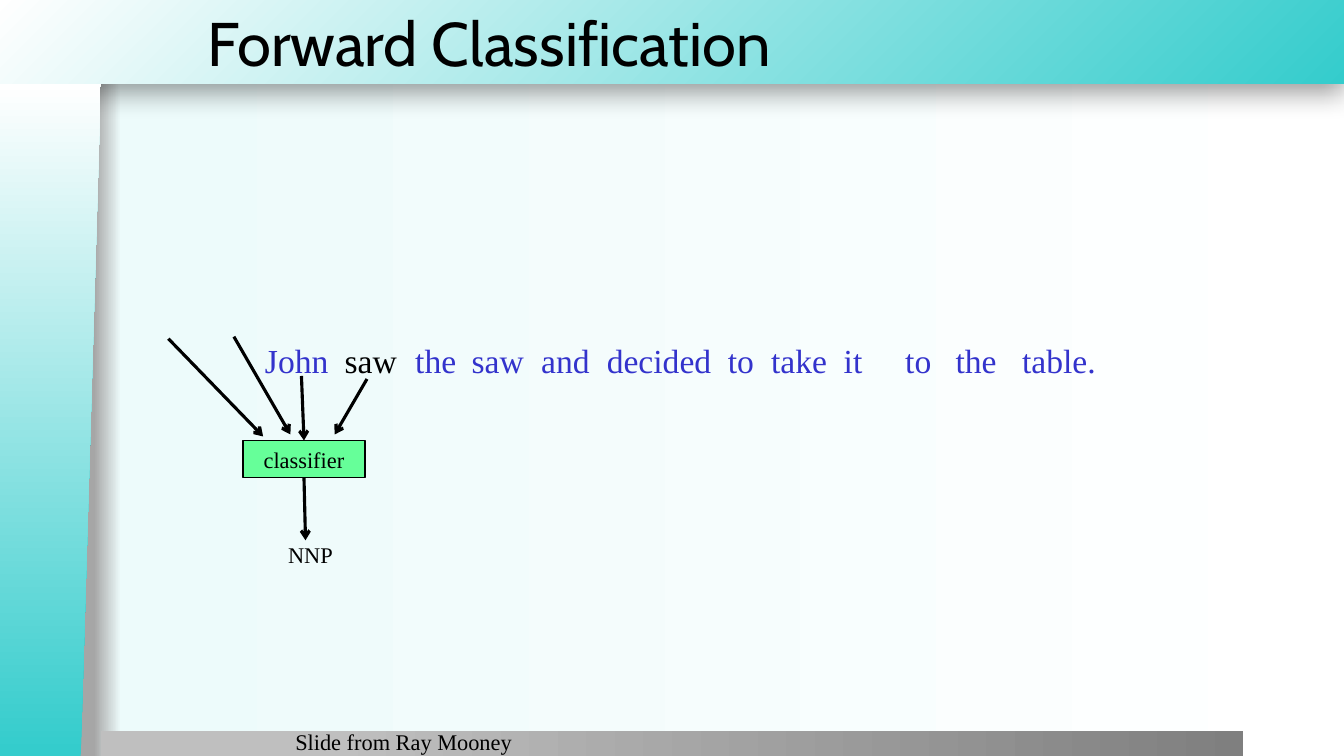
import pptx
import pptx.dml.color
import pptx.enum.shapes
import pptx.enum.text
import pptx.oxml
import pptx.oxml.ns
import pptx.util
from pptx.util import Inches

COLOURS = {
    "black": "000000", "white": "FFFFFF", "teal": "34CCCC", "mist": "EDFBFB",
    "edge": "A6A6A6", "silver": "BFBFBF", "grey": "7F7F7F",
    "blue": "3333CC", "green": "66FF99",
}
SHAPES = pptx.enum.shapes.MSO_SHAPE
ALIGN = pptx.enum.text.PP_ALIGN
ANCHOR = pptx.enum.text.MSO_ANCHOR
TOP, BOTTOM = 0, 2


def rgb(name):
    return pptx.dml.color.RGBColor.from_string(COLOURS[name])


def xml(markup):
    head, rest = markup.split(">", 1)
    closing = "/" if head.endswith("/") else ""
    head = head.rstrip("/") + " " + pptx.oxml.ns.nsdecls("a")
    return pptx.oxml.parse_xml(head + closing + ">" + rest)


def write(para, text, font="Times New Roman", size=16, colour="black", align=ALIGN.LEFT):
    para.alignment = align
    span = para.add_run()
    span.text = text
    span.font.name = font
    span.font.size = pptx.util.Pt(size)
    span.font.color.rgb = rgb(colour)


class SlideBuilder:
    """Draws styled elements on the current slide."""

    def __init__(self, page):
        self.page = page

    def gradient(self, owner, fill, stops, toward_corner=False):
        fill.gradient()
        old = owner.element.find(".//" + pptx.oxml.ns.qn("a:gradFill"))
        marks = "".join(
            f'<a:gs pos="{place * 1000}"><a:srgbClr val="{COLOURS[name]}"/></a:gs>'
            for place, name in stops)
        course = '<a:lin ang="0" scaled="0"/>'
        if toward_corner:
            course = '<a:path path="circle"><a:fillToRect l="100000" t="100000"/></a:path>'
        old.getparent().replace(old, xml(
            f'<a:gradFill rotWithShape="1"><a:gsLst>{marks}</a:gsLst>{course}</a:gradFill>'))

    def background(self, stops):
        self.gradient(self.page, self.page.background.fill, stops)

    def shape(self, kind, left, top, width, height):
        shape = self.page.shapes.add_shape(
            kind, Inches(left), Inches(top), Inches(width), Inches(height))
        shape.shadow.inherit = False
        return shape

    def band(self, kind, place, stops, toward_corner=False):
        band = self.shape(kind, *place)
        self.gradient(band, band.fill, stops, toward_corner)
        band.line.fill.background()
        return band

    def drop_shadow(self, shape):
        effects = shape.element.spPr.find(pptx.oxml.ns.qn("a:effectLst"))
        blur, distance = pptx.util.Pt(20), pptx.util.Pt(6)
        effects.append(xml(
            f'<a:outerShdw blurRad="{blur}" dist="{distance}" dir="5400000" rotWithShape="0">'
            f'<a:srgbClr val="{COLOURS["black"]}"><a:alpha val="40000"/></a:srgbClr>'
            '</a:outerShdw>'))

    def title(self, text, left, top, width, height):
        title = self.page.shapes.title
        title.left, title.top = Inches(left), Inches(top)
        title.width, title.height = Inches(width), Inches(height)
        title.text_frame.vertical_anchor = ANCHOR.MIDDLE
        title.text_frame.auto_size = pptx.enum.text.MSO_AUTO_SIZE.NONE
        write(title.text_frame.paragraphs[0], text, font="Cabin", size=44)
        title.element.getparent().append(title.element)

    def text(self, text, left, top, width, height, **style):
        box = self.page.shapes.add_textbox(
            Inches(left), Inches(top), Inches(width), Inches(height))
        box.text_frame.word_wrap = True
        para = box.text_frame.paragraphs[0]
        if text:
            write(para, text, **style)
        return para

    def sentence(self, words, left, top, width, height):
        para = self.text("", left, top, width, height)
        stops = "".join(
            f'<a:tab pos="{Inches(place)}" algn="l"/>' for _, place, _ in words[1:])
        para._p.get_or_add_pPr().append(xml(f"<a:tabLst>{stops}</a:tabLst>"))
        for word, place, colour in words:
            write(para, "\t" + word if place else word, size=24, colour=colour)

    def node(self, text, left, top, width, height):
        box = self.shape(SHAPES.RECTANGLE, left, top, width, height)
        box.fill.solid()
        box.fill.fore_color.rgb = rgb("green")
        box.line.color.rgb = rgb("black")
        box.line.width = pptx.util.Pt(1)
        box.text_frame.vertical_anchor = ANCHOR.MIDDLE
        write(box.text_frame.paragraphs[0], text, align=ALIGN.CENTER)
        return box

    def arrow(self, start, end):
        arrow = self.page.shapes.add_connector(
            pptx.enum.shapes.MSO_CONNECTOR.STRAIGHT,
            *(Inches(value) for value in start + end))
        arrow.line.color.rgb = rgb("black")
        arrow.line.width = pptx.util.Pt(2.25)
        arrow.line._get_or_add_ln().append(xml('<a:tailEnd type="arrow"/>'))
        arrow.element.spPr.append(xml("<a:effectLst/>"))
        return arrow


def main():
    deck = pptx.Presentation()
    deck.slide_width, deck.slide_height = Inches(13.33), Inches(7.5)
    slide = SlideBuilder(deck.slides.add_slide(deck.slide_layouts[5]))

    slide.background([(7, "edge"), (9, "mist"), (100, "white")])
    header = slide.band(SHAPES.RECTANGLE, (-0.01, 0, 13.34, 0.83),
                        [(0, "teal"), (100, "white")], toward_corner=True)
    slide.drop_shadow(header)
    slide.band(SHAPES.RECTANGLE, (1, 7.25, 11.33, 0.26), [(20, "silver"), (100, "grey")])
    sidebar = slide.band(SHAPES.FLOWCHART_MANUAL_INPUT, (-2.84, 3.67, 6.68, 1),
                         [(1, "teal"), (100, "white")])
    sidebar.rotation = 270
    sidebar.element.spPr.xfrm.set("flipV", "1")
    slide.title("Forward Classification", 1.96, 0, 11.38, 0.83)

    words = "John saw the saw and decided to take it to the table.".split()
    places = [0, 0.79, 1.49, 2.05, 2.74, 3.39, 4.59, 5.02, 5.74, 6.35, 6.85, 7.51]
    colours = ["blue", "black"] + ["blue"] * 10
    slide.sentence(list(zip(words, places, colours)), 2.53, 3.32, 9, 0.5)

    classifier = slide.node("classifier", 2.41, 4.37, 1.21, 0.37)
    for start, end in [((1.67, 3.36), (2.61, 4.33)),
                       ((2.32, 3.34), (2.88, 4.31)),
                       ((3.64, 3.76), (3.32, 4.31))]:
        slide.arrow(start, end)
    slide.arrow((2.99, 3.73), (3.02, 4.37)).end_connect(classifier, TOP)
    slide.arrow((3.02, 4.74), (3.03, 5.36)).begin_connect(classifier, BOTTOM)

    slide.text("NNP", 2.66, 5.32, 0.84, 0.37, align=ALIGN.CENTER)
    slide.text("Slide from Ray Mooney", 2.83, 7.17, 3.42, 0.25)
    deck.save("out.pptx")


if __name__ == "__main__":
    main()
